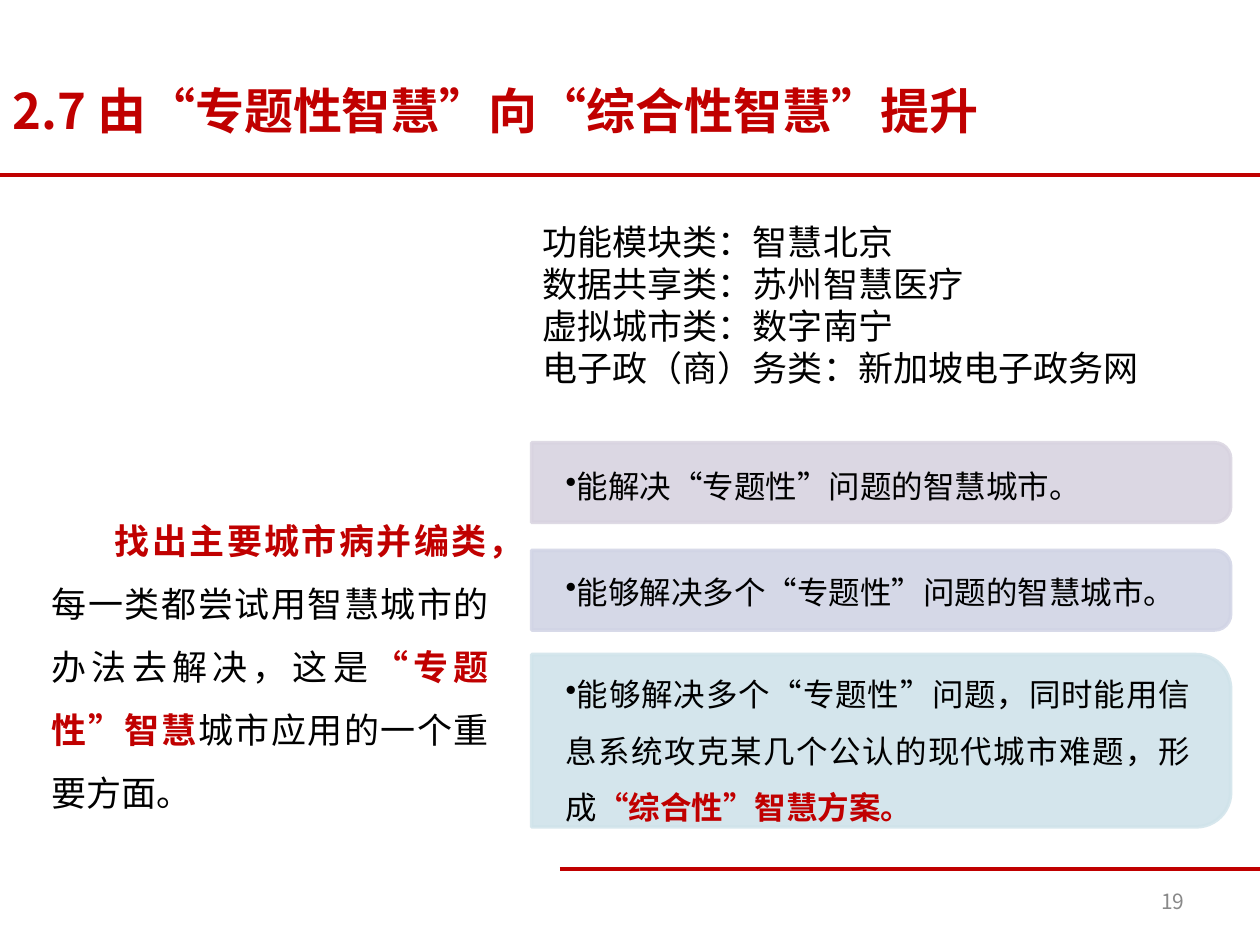
from dataclasses import dataclass

from lxml.etree import SubElement
from pptx import Presentation
from pptx.dml.color import RGBColor
from pptx.enum.shapes import MSO_CONNECTOR, MSO_SHAPE
from pptx.enum.text import MSO_ANCHOR, PP_ALIGN
from pptx.oxml.ns import qn
from pptx.util import Pt


@dataclass(frozen=True)
class Theme:
    font: str = "Noto Sans CJK SC"
    latin_font: str = "Arial"
    red: str = "C00000"
    black: str = "000000"
    gray: str = "898989"
    title_size: int = 28
    body_size: int = 20
    card_size: int = 18
    number_size: int = 12


theme = Theme()


def place_text(box, left, top, width, height, anchor=MSO_ANCHOR.TOP):
    """Position a box and let its text wrap; return the text frame."""
    box.left, box.top, box.width, box.height = Pt(left), Pt(top), Pt(width), Pt(height)
    frame = box.text_frame
    frame.word_wrap = True
    frame.vertical_anchor = anchor
    return frame


def write(para, spans, size, align=PP_ALIGN.LEFT, latin=theme.font):
    """Fill a paragraph with (text, colour) spans; red ones are bold."""
    para.alignment = align
    para.font.size = Pt(size)
    para.font.name = latin
    defaults = para._p.get_or_add_pPr().find(qn("a:defRPr"))
    SubElement(defaults, qn("a:ea")).set("typeface", theme.font)
    for text, color in spans:
        span = para.add_run()
        span.text = text
        span.font.bold = color == theme.red
        span.font.color.rgb = RGBColor.from_string(color)
        span._r.get_or_add_rPr().set("lang", "zh-CN")


deck = Presentation()
deck.slide_width, deck.slide_height = Pt(720), Pt(540)
page = deck.slides.add_slide(deck.slide_layouts[5])
shapes = page.shapes

# Rules under the title and above the page number
for left, top in ((320, 496.8), (0, 100)):
    rule = shapes.add_connector(MSO_CONNECTOR.STRAIGHT, Pt(left), Pt(top), Pt(720), Pt(top))
    rule.line.color.rgb = RGBColor.from_string(theme.red)
    rule.line.width = Pt(2.25)
    SubElement(rule._element.spPr, qn("a:effectLst"))

# Title
frame = place_text(shapes.title, 0, 42.5, 695.5, 41)
write(frame.paragraphs[0], [("2.7 由“专题性智慧”向“综合性智慧”提升", theme.red)], theme.title_size)

# Page number
number = shapes.add_textbox(0, 0, 0, 0)
frame = place_text(number, 516, 500.5, 168, 28.75, MSO_ANCHOR.MIDDLE)
write(frame.paragraphs[0], [("19", theme.gray)], theme.number_size, PP_ALIGN.RIGHT)

# Explanation on the left
explanation = shapes.add_textbox(0, 0, 0, 0)
para = place_text(explanation, 22.5, 281.5, 264, 188.5).paragraphs[0]
write(para, [
    ("找出主要城市病并编类，", theme.red),
    ("每一类都尝试用智慧城市的办法去解决，这是", theme.black),
    ("“专题性”智慧", theme.red),
    ("城市应用的一个重要方面。", theme.black),
], theme.body_size, PP_ALIGN.JUSTIFY)
para.line_spacing = 1.5
para._p.pPr.set("indent", str(Pt(36)))

# Examples at the upper right
examples = shapes.add_textbox(0, 0, 0, 0)
frame = place_text(examples, 303, 122.5, 369, 103)
for index, line in enumerate((
    "功能模块类：智慧北京",
    "数据共享类：苏州智慧医疗",
    "虚拟城市类：数字南宁",
    "电子政（商）务类：新加坡电子政务网",
)):
    para = frame.add_paragraph() if index else frame.paragraphs[0]
    write(para, [(line, theme.black)], theme.body_size, latin=theme.latin_font)

# Cards: top, height, text top, text height, colour, line spacing, spans
cards = (
    (253, 45.5, 255.5, 41, "D8D3E0", Pt(25),
     [("能解决“专题性”问题的智慧城市。", theme.black)]),
    (314.5, 45.5, 315, 42.5, "D1D4E5", Pt(25),
     [("能够解决多个“专题性”问题的智慧城市。", theme.black)]),
    (374, 98.5, 381, 85, "D0E3EA", 1.5,
     [("能够解决多个“专题性”问题，同时能用信息系统攻克某几个公认的现代城市难题，形成",
       theme.black), ("“综合性”智慧方案。", theme.red)]),
)
card_left, card_width = 303.75, 399.5
for top, height, text_top, text_height, color, spacing, spans in cards:
    # Turned a quarter so that the rounded pair of corners faces right
    card = shapes.add_shape(
        MSO_SHAPE.ROUND_2_SAME_RECTANGLE,
        Pt(card_left + (card_width - height) / 2), Pt(top + (height - card_width) / 2),
        Pt(height), Pt(card_width))
    card.rotation = 90
    card.adjustments[0] = 0.2
    card.shadow.inherit = False
    card.fill.solid()
    card.line.width = Pt(2)
    for paint, opacity in ((card.fill.fore_color, 90), (card.line.color, 83)):
        paint.rgb = RGBColor.from_string(color)
    for fill, opacity in zip(card._element.spPr.iter(qn("a:srgbClr")), (90, 83)):
        SubElement(fill, qn("a:alpha")).set("val", str(opacity * 1000))

    label = shapes.add_textbox(0, 0, 0, 0)
    frame = place_text(label, card_left, text_top, 396, text_height, MSO_ANCHOR.MIDDLE)
    frame.margin_left = frame.margin_right = Pt(19.5)
    frame.margin_top = frame.margin_bottom = Pt(10)
    para = frame.paragraphs[0]
    para.line_spacing = spacing
    write(para, spans, theme.card_size, PP_ALIGN.JUSTIFY)
    bullet = para._p.pPr.makeelement(qn("a:buChar"), {"char": "•"})
    para._p.pPr.find(qn("a:defRPr")).addprevious(bullet)

deck.save("out.pptx")
